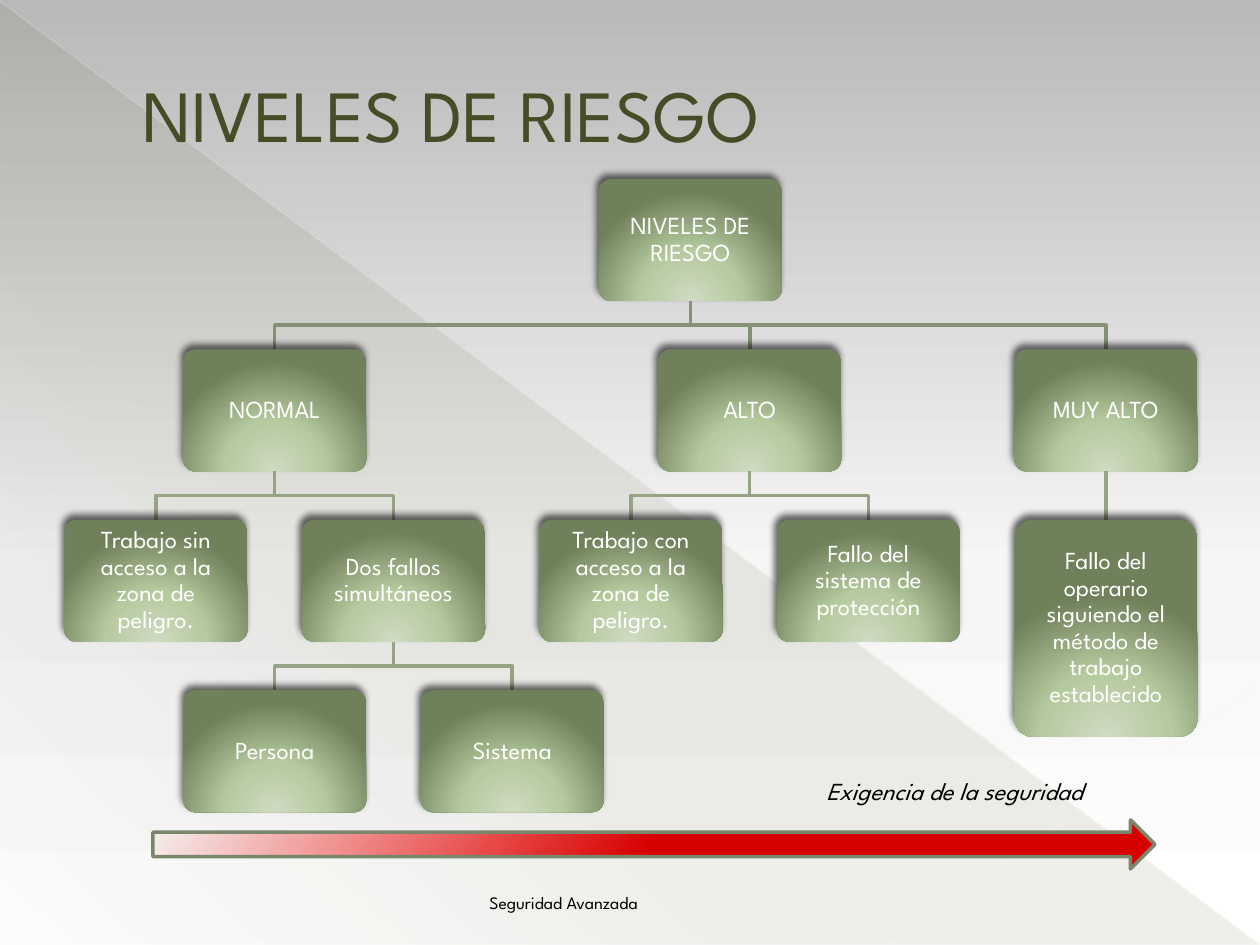
from lxml import etree
from pptx import Presentation
from pptx.dml.color import RGBColor
from pptx.enum.shapes import MSO_CONNECTOR, MSO_SHAPE
from pptx.enum.text import MSO_ANCHOR, PP_ALIGN
from pptx.oxml.ns import qn
from pptx.util import Pt

SCALE = 914400 / 126
FONT = "League Spartan"
STRAIGHT = MSO_CONNECTOR.STRAIGHT
ROUND_RECT, ARROW, TRIANGLE = (
    MSO_SHAPE.ROUNDED_RECTANGLE, MSO_SHAPE.RIGHT_ARROW, MSO_SHAPE.RIGHT_TRIANGLE)
LEFT, CENTER, RIGHT = PP_ALIGN.LEFT, PP_ALIGN.CENTER, PP_ALIGN.RIGHT
TOP, MIDDLE, BOTTOM = MSO_ANCHOR.TOP, MSO_ANCHOR.MIDDLE, MSO_ANCHOR.BOTTOM

COLORS = {
    "bg_top": "B9B9B9", "bg_mid": "F6F6F6", "white": "FFFFFF", "black": "000000",
    "olive": "444D26", "ray": "FFFDE3", "ray_low": "FFFDE6",
    "node_light": "CFDBC3", "node_mid": "B6CA9F", "node_dark": "6F815B",
    "link_top": "849175", "link": "96A485",
    "red": "D70000", "red_clear": "FF0000", "arrow_line": "7A866C",
}

NODE_W, NODE_H, TALL_H = 183, 122, 217
FIRST_X, HALF_COL = 156, 118.75
FIRST_Y, ROW = 179, 170.4

TREE = ("NIVELES DE RIESGO", 4.5, [
    ("NORMAL", 1, [
        ("Trabajo sin acceso a la zona de peligro.", 0, []),
        ("Dos fallos simultáneos", 2, [
            ("Persona", 1, []),
            ("Sistema", 3, []),
        ]),
    ]),
    ("ALTO", 5, [
        ("Trabajo con acceso a la zona de peligro.", 4, []),
        ("Fallo del sistema de protección", 6, []),
    ]),
    ("MUY ALTO", 8, [
        ("Fallo del operario siguiendo el método de trabajo establecido", 8, []),
    ]),
])


def px(n):
    """Turn px into EMU."""
    return round(n * SCALE)


def rgb(name):
    """Look up a colour by name."""
    return RGBColor.from_string(COLORS[name])


def sub(parent, tag, **attrs):
    """Append a DrawingML child element."""
    return etree.SubElement(parent, qn(tag), {k: str(v) for k, v in attrs.items()})


def set_gradient(fill, parent, stops, angle=None):
    """Give a gradient of (position, colour, opacity) stops, radial without an angle."""
    fill.solid()
    solid = parent.find(qn("a:solidFill"))
    grad = etree.Element(qn("a:gradFill"), {"rotWithShape": "1"})
    gs_list = sub(grad, "a:gsLst")
    for pos, color, alpha in stops:
        gs = sub(gs_list, "a:gs", pos=pos * 1000)
        clr = sub(gs, "a:srgbClr", val=COLORS[color])
        if alpha < 100:
            sub(clr, "a:alpha", val=alpha * 1000)
    if angle is None:
        circle = sub(grad, "a:path", path="circle")
        sub(circle, "a:fillToRect", l=50000, t=155000, r=50000, b=-55000)
    else:
        sub(grad, "a:lin", ang=angle * 60000, scaled=0)
    parent.replace(solid, grad)


def set_line(shape, color, width):
    """Give a solid outline."""
    shape.line.color.rgb = rgb(color)
    shape.line.width = Pt(width)


def add_text(tf, text, size, color, align, anchor, italic=False):
    """Write one paragraph into a text frame."""
    tf.word_wrap = True
    tf.vertical_anchor = anchor
    p = tf.paragraphs[0]
    p.alignment = align
    r = p.add_run()
    r.text = text
    r.font.name, r.font.size, r.font.italic = FONT, Pt(size), italic
    r.font.color.rgb = rgb(color)
    return p


def add_label(s, box, *text_args, **text_opts):
    """Add a text box and return its paragraph."""
    sp = s.shapes.add_textbox(*map(px, box))
    return add_text(sp.text_frame, *text_args, **text_opts)


def add_gradient_shape(s, kind, box, stops, angle=None):
    """Add a preset shape with a gradient and neither outline nor shadow."""
    sp = s.shapes.add_shape(kind, *map(px, box))
    set_gradient(sp.fill, sp._element.spPr, stops, angle)
    sp.line.fill.background()
    sp.shadow.inherit = False
    return sp


def add_line(s, start, end, color, width, alpha=100):
    """Add a straight connector without shadow."""
    line = s.shapes.add_connector(STRAIGHT, *map(px, start + end))
    set_line(line, color, width)
    if alpha < 100:
        sub(line._element.spPr.find(".//" + qn("a:srgbClr")), "a:alpha", val=alpha * 1000)
    sub(line._element.spPr, "a:effectLst")
    return line


def add_elbow(s, start, end, color):
    """Add an open elbow that turns halfway down."""
    (x1, y1), (x2, y2) = start, end
    mid = (y1 + y2) / 2
    builder = s.shapes.build_freeform(px(x1), px(y1))
    corners = [(x1, mid), (x2, mid), end]
    builder.add_line_segments([(px(x), px(y)) for x, y in corners], close=False)
    sp = builder.convert_to_shape()
    sp.fill.background()
    set_line(sp, color, 2)
    sp.shadow.inherit = False


def add_node(s, text, x, y, height):
    """Add a shaded node centred on x."""
    stops = [(0, "node_light", 100), (46, "node_mid", 100), (100, "node_dark", 100)]
    sp = add_gradient_shape(s, ROUND_RECT, (x - NODE_W / 2, y, NODE_W, height), stops)
    sp.adjustments[0] = 0.1
    effects = sp._element.spPr.find(qn("a:effectLst"))
    shadow = sub(effects, "a:outerShdw", blurRad=Pt(4), dist=Pt(3),
                 dir=245 * 60000, algn="ctr", rotWithShape=0)
    sub(sub(shadow, "a:srgbClr", val=COLORS["black"]), "a:alpha", val=60000)
    tf = sp.text_frame
    tf.margin_left = tf.margin_right = tf.margin_top = tf.margin_bottom = px(8)
    add_text(tf, text, 14, "white", CENTER, MIDDLE).line_spacing = 0.9
    return sp


def add_tree(s, branch, level=0, parent=None, start=None):
    """Add a node, its link to the parent and all nodes below it."""
    text, column, children = branch
    x, y = FIRST_X + HALF_COL * column, FIRST_Y + ROW * level
    height = TALL_H if len(text) > 50 else NODE_H
    color = "link_top" if level == 1 else "link"
    line = None
    if parent is not None and start[0] == x:
        line = add_line(s, start, (x, y), color, 2)
        line.begin_connect(parent, 2)
    elif parent is not None:
        add_elbow(s, start, (x, y), color)
    node = add_node(s, text, x, y, height)
    if line is not None:
        line.end_connect(node, 0)
    for child in children:
        add_tree(s, child, level + 1, node, (x, y + height))


def add_backdrop(s):
    """Add the background gradient, the tinted triangle and the light rays."""
    fill = s.background.fill
    fill.solid()
    set_gradient(fill, s._element.find(".//" + qn("p:bgPr")),
                 [(0, "bg_top", 100), (60, "bg_mid", 100), (100, "white", 100)], 90)
    add_gradient_shape(s, TRIANGLE, (1, 2, 1258, 942),
                       [(0, "olive", 10), (70, "olive", 8), (100, "olive", 1)], 133)
    add_line(s, (0, 1), (1259, 944), "ray", 0.39, 35)
    add_line(s, (1260, 682), (891, 944), "ray_low", 0.47, 45)


def main():
    """Build and save the slide."""
    prs = Presentation()
    prs.slide_width, prs.slide_height = px(1260), px(945)
    s = prs.slides.add_slide(prs.slide_layouts[6])
    add_backdrop(s)
    add_tree(s, TREE)
    title = add_label(s, (63, 37, 1134, 152), "NIVELES DE RIESGO", 42, "olive", LEFT, MIDDLE)
    title._p.get_or_add_pPr().set("marL", str(px(67)))
    add_label(s, (63, 877, 587, 42), "Seguridad Avanzada", 10, "black", RIGHT, BOTTOM)
    arrow = add_gradient_shape(s, ARROW, (153, 820, 1002, 49),
                               [(50, "red", 100), (100, "red_clear", 0)], 220)
    set_line(arrow, "arrow_line", 2)
    add_label(s, (814, 770, 362, 43), "Exigencia de la seguridad", 14, "black",
              LEFT, TOP, italic=True)
    prs.save("out.pptx")


if __name__ == "__main__":
    main()
